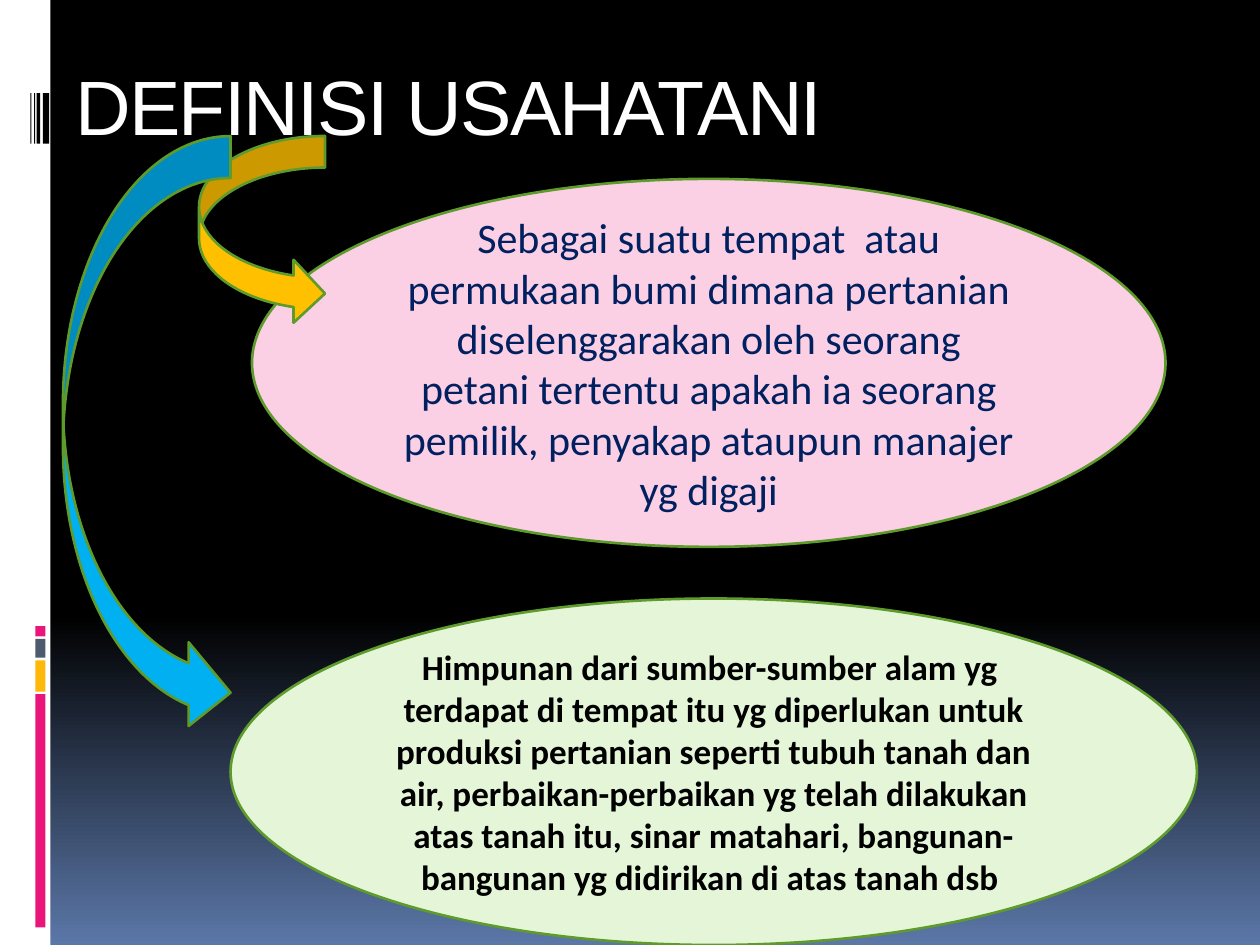
"""Build the "Definisi Usahatani" slide: a title, two definitions and two curved arrows."""
from copy import deepcopy

from pptx import Presentation
from pptx.dml.color import RGBColor
from pptx.enum.shapes import MSO_SHAPE
from pptx.enum.text import MSO_ANCHOR, PP_ALIGN
from pptx.util import Inches, Pt

RECTANGLE, ELLIPSE = MSO_SHAPE.RECTANGLE, MSO_SHAPE.OVAL
ARROW = MSO_SHAPE.CURVED_RIGHT_ARROW
MIDDLE, LEFT, CENTER = MSO_ANCHOR.MIDDLE, PP_ALIGN.LEFT, PP_ALIGN.CENTER

COLORS = {
    "black": "000000", "white": "FFFFFF", "dusk": "5B77A8", "magenta": "EA157A",
    "amber": "FEB80A", "slate": "4E5B6F", "outline": "5E9B2C", "pink": "FBD0E4",
    "mint": "E5F6D8", "navy": "002060", "gold": "FFC000", "sky": "00B0F0",
}
WIDTH, HEIGHT = 10, 7.5
BACKGROUND = [(0, "black"), (0.65, "black"), (1, "dusk")]

SIDEBAR = (0, 0, 0.4, HEIGHT)
BLOCK_LEFT, BLOCK_WIDTH, BLOCK_TOP, BLOCK_GAP = 0.28, 0.08, 4.97, 0.02
BLOCKS = [("magenta", 0.08), ("slate", 0.15), ("amber", 0.25), ("magenta", 1.85)]
BAR_TOP, BAR_HEIGHT = 0.74, 0.4
BARS = [(0.24, 0.01), (0.27, 0.01), (0.29, 0.03), (0.34, 0.05)]

TITLE = ("DEFINISI USAHATANI", (0.5, 0.33, 8.5, 1))
TITLE_FORMAT = {"name": "Arial", "size": Pt(44), "bold": False}
DEFINITIONS = [
    ("Sebagai suatu tempat  atau permukaan bumi dimana pertanian diselenggarakan "
     "oleh seorang petani tertentu apakah ia seorang pemilik, penyakap ataupun "
     "manajer yg digaji",
     (2, 1.42, 7.25, 2.92), "pink", "navy",
     {"name": "Calibri", "size": Pt(24), "bold": False}),
    ("Himpunan dari sumber-sumber alam yg  terdapat di tempat itu yg diperlukan "
     "untuk produksi pertanian seperti tubuh tanah dan air, perbaikan-perbaikan yg "
     "telah dilakukan atas tanah itu, sinar matahari, bangunan-bangunan yg didirikan "
     "di atas tanah dsb ",
     (1.83, 4.75, 7.67, 2.75), "mint", "black",
     {"name": "Calibri", "size": Pt(20), "bold": True}),
]
ARROWS = [((1.58, 1.08, 1, 1.5), "gold"), ((0.5, 1.08, 1.33, 4.75), "sky")]


def color(name):
    return RGBColor.from_string(COLORS[name])


def paint_background(slide):
    fill = slide.background.fill
    fill.gradient()
    fill.gradient_angle = 270
    first = fill.gradient_stops[0]._gs
    first.addnext(deepcopy(first))
    for stop, (position, name) in zip(fill.gradient_stops, BACKGROUND):
        stop.position = position
        stop.color.rgb = color(name)


def add_shape(slide, kind, place, fill, outline=None):
    shape = slide.shapes.add_shape(kind, *map(Inches, place))
    shape.shadow.inherit = False
    shape.fill.solid()
    shape.fill.fore_color.rgb = color(fill)
    if outline:
        shape.line.color.rgb = color(outline)
        shape.line.width = Pt(1.5)
    else:
        shape.line.fill.background()
    return shape


def write(box, text, align, ink, font_format):
    frame = box.text_frame
    frame.word_wrap = True
    frame.vertical_anchor = MIDDLE
    para = frame.paragraphs[0]
    para.alignment = align
    span = para.add_run()
    span.text = text
    span.font.color.rgb = color(ink)
    for key, value in font_format.items():
        setattr(span.font, key, value)
    return span


def main():
    deck = Presentation()
    deck.slide_width, deck.slide_height = Inches(WIDTH), Inches(HEIGHT)
    slide = deck.slides.add_slide(deck.slide_layouts[6])
    paint_background(slide)

    add_shape(slide, RECTANGLE, SIDEBAR, "white")
    top = BLOCK_TOP
    for fill, height in BLOCKS:
        add_shape(slide, RECTANGLE, (BLOCK_LEFT, top, BLOCK_WIDTH, height), fill)
        top += height + BLOCK_GAP
    for left, width in BARS:
        add_shape(slide, RECTANGLE, (left, BAR_TOP, width, BAR_HEIGHT), "black")

    text, place = TITLE
    title = slide.shapes.add_textbox(*map(Inches, place))
    span = write(title, text, LEFT, "white", TITLE_FORMAT)
    span._r.get_or_add_rPr().set("spc", "-100")

    for text, place, fill, ink, font_format in DEFINITIONS:
        ellipse = add_shape(slide, ELLIPSE, place, fill, "outline")
        write(ellipse, text, CENTER, ink, font_format)
    for place, fill in ARROWS:
        add_shape(slide, ARROW, place, fill, "outline")

    deck.save("out.pptx")


if __name__ == "__main__":
    main()
